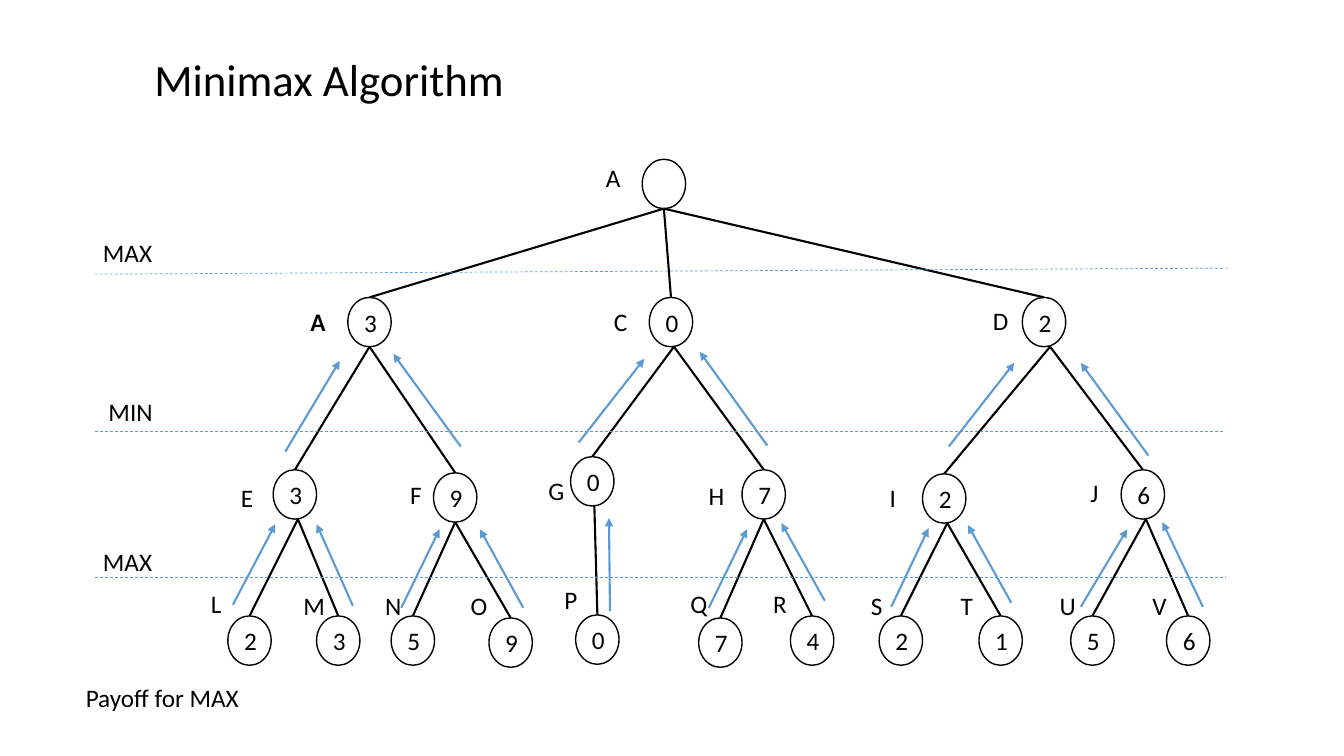
from dataclasses import dataclass

from lxml import etree
from pptx import Presentation
from pptx import util as u
from pptx.dml import color
from pptx.enum import dml, shapes, text
from pptx.oxml import ns

BLACK, WHITE, BLUE = "000000", "FFFFFF", "5B9BD5"
WIDE, HIGH = 0.43, 0.49


def inch(value):
    return u.Cm(value * 2.54)


def ink(code):
    return color.RGBColor.from_string(code)


def apply(item, style):
    for name, value in style.items():
        setattr(item, name, value)


@dataclass
class Node:
    label: str
    value: str
    x: float
    y: float
    label_x: float
    label_y: float
    kids: tuple = ()
    foot: float = 0
    bold: bool = False


class Deck:
    font = {"name": "Calibri", "size": u.Pt(18), "bold": False}
    frame = {"auto_size": text.MSO_AUTO_SIZE.SHAPE_TO_FIT_TEXT,
             "vertical_anchor": text.MSO_ANCHOR.TOP}

    def __init__(self):
        self.show = Presentation()
        apply(self.show, {"slide_width": inch(13.33), "slide_height": inch(7.5)})
        self.slide = self.show.slides.add_slide(self.show.slide_layouts[5])

    def fill(self, frame, words, align=text.PP_ALIGN.CENTER, **extra):
        para = frame.paragraphs[0]
        para.alignment = align
        run = para.add_run()
        run.text = words
        apply(run.font, {**self.font, **extra})
        run.font.color.rgb = ink(BLACK)

    def title(self, words, x, y, w, h):
        box = self.slide.shapes.title
        apply(box, {"left": inch(x), "top": inch(y),
                    "width": inch(w), "height": inch(h)})
        apply(box.text_frame, {**self.frame, "word_wrap": False})
        self.fill(box.text_frame, words, text.PP_ALIGN.LEFT, size=u.Pt(32))

    def label(self, words, x, y, w=0.31, wrap=True, **extra):
        box = self.slide.shapes.add_textbox(*map(inch, (x, y, w, 0.4)))
        apply(box.text_frame, {**self.frame, "word_wrap": wrap})
        self.fill(box.text_frame, words, **extra)

    def oval(self, words, x, y):
        oval = self.slide.shapes.add_shape(
            shapes.MSO_SHAPE.OVAL, *map(inch, (x, y, WIDE, HIGH)))
        oval.shadow.inherit = False
        oval.fill.solid()
        oval.fill.fore_color.rgb = ink(WHITE)
        oval.line.color.rgb = ink(BLACK)
        oval.line.width = u.Pt(1)
        oval.text_frame.vertical_anchor = text.MSO_ANCHOR.MIDDLE
        if words:
            self.fill(oval.text_frame, words)
        return oval

    def link(self, ends, code, width=1.5, dash=None, head=False):
        link = self.slide.shapes.add_connector(
            shapes.MSO_CONNECTOR.STRAIGHT, *map(inch, ends))
        link.line.color.rgb = ink(code)
        apply(link.line, {"width": u.Pt(width), "dash_style": dash})
        props = link._element.spPr
        if head:
            etree.SubElement(props.find(ns.qn("a:ln")), ns.qn("a:tailEnd"),
                             type="triangle")
        etree.SubElement(props, ns.qn("a:effectLst"))
        return link

    def tree(self, node):
        oval = self.oval(node.value, node.x, node.y)
        self.label(node.label, node.label_x, node.label_y, bold=node.bold)
        for kid in node.kids:
            child = self.tree(kid)
            edge = self.link((node.x + WIDE / 2 + node.foot, node.y + HIGH,
                              kid.x + WIDE / 2, kid.y), BLACK)
            edge.end_connect(child, 0)
        return oval


LEFT = Node("A", "3", 3.45, 2.95, 2.98, 2.99, (
    Node("E", "3", 2.71, 4.66, 2.29, 4.74, (
        Node("L", "2", 2.26, 6.11, 1.99, 5.79),
        Node("M", "3", 3.14, 6.11, 2.91, 5.81)), 0.03),
    Node("F", "9", 4.3, 4.69, 3.97, 4.71, (
        Node("N", "5", 3.88, 6.11, 3.72, 5.81),
        Node("O", "9", 4.85, 6.13, 4.57, 5.81)))), bold=True)
MID = Node("C", "0", 6.44, 2.95, 5.99, 2.99, (
    Node("G", "0", 5.66, 4.53, 5.34, 4.67, (
        Node("P", "0", 5.71, 6.1, 5.5, 5.75),), 0.02),
    Node("H", "7", 7.36, 4.66, 6.93, 4.72, (
        Node("Q", "7", 6.93, 6.13, 6.75, 5.79),
        Node("R", "4", 7.84, 6.11, 7.57, 5.79)))), 0.03)
RIGHT = Node("D", "2", 10.14, 2.95, 9.75, 2.98, (
    Node("I", "2", 9.15, 4.7, 8.7, 4.74, (
        Node("S", "2", 8.72, 6.11, 8.54, 5.81),
        Node("T", "1", 9.71, 6.11, 9.43, 5.81)), 0.03),
    Node("J", "6", 11.12, 4.66, 10.7, 4.69, (
        Node("U", "5", 10.62, 6.11, 10.41, 5.81),
        Node("V", "6", 11.57, 6.11, 11.33, 5.81)), 0.03)), 0.06)
ROOT = Node("A", "", 6.37, 1.58, 5.91, 1.56, (LEFT, MID, RIGHT))

LEVELS = (
    ("MAX", 0.92, 2.31, 0.69), ("MIN", 0.94, 3.88, 0.71),
    ("MAX", 0.92, 5.37, 0.69), ("Payoff for MAX", 0.74, 6.72, 1.74),
)
RULES = (
    (0.94, 2.72, 12.2, 2.66), (0.94, 4.28, 12.15, 4.28),
    (0.94, 5.73, 12.16, 5.73),
)
ARROWS = (
    (2.31, 6, 2.73, 5.2), (3.5, 6.01, 3.14, 5.2),
    (3.98, 6.03, 4.36, 5.25), (5.19, 6.03, 4.76, 5.25),
    (6.05, 6.06, 6.04, 5.14),
    (7.03, 6.03, 7.41, 5.25), (8.18, 5.96, 7.75, 5.19),
    (8.84, 6.02, 9.21, 5.24), (10.03, 5.98, 9.6, 5.21),
    (10.72, 6.02, 11.18, 5.25), (11.93, 6.02, 11.53, 5.18),
    (2.83, 4.48, 3.37, 3.58), (4.57, 4.43, 3.9, 3.51),
    (5.74, 4.39, 6.39, 3.56), (7.61, 4.42, 6.94, 3.49),
    (9.41, 4.43, 10.06, 3.6), (11.39, 4.52, 10.72, 3.6),
)


def main():
    deck = Deck()
    deck.title("Minimax Algorithm", 1.43, 0.46, 3.71, 0.64)
    deck.tree(ROOT)
    for level in LEVELS:
        deck.label(*level, wrap=False)
    for ends in RULES:
        deck.link(ends, BLUE, 0.5, dml.MSO_LINE.DASH)
    for ends in ARROWS:
        deck.link(ends, BLUE, head=True)
    deck.show.save("out.pptx")


if __name__ == "__main__":
    main()
